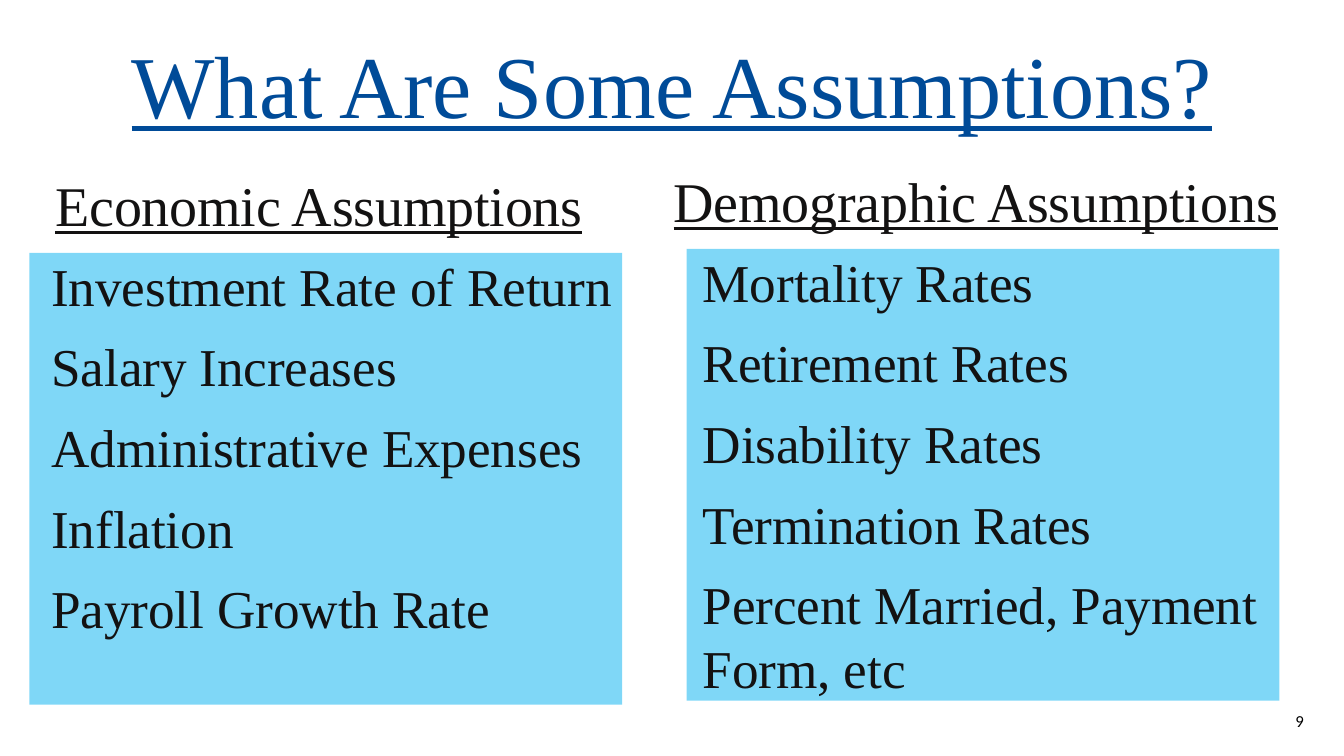
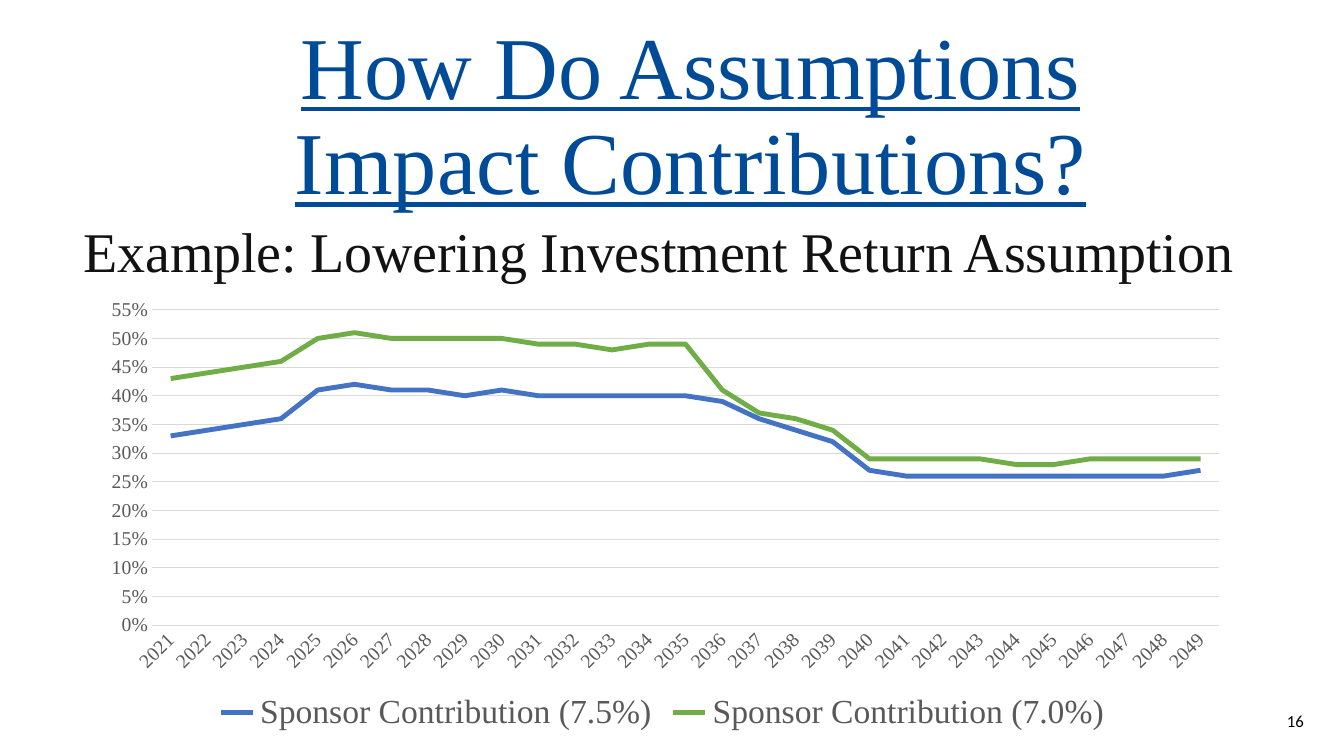
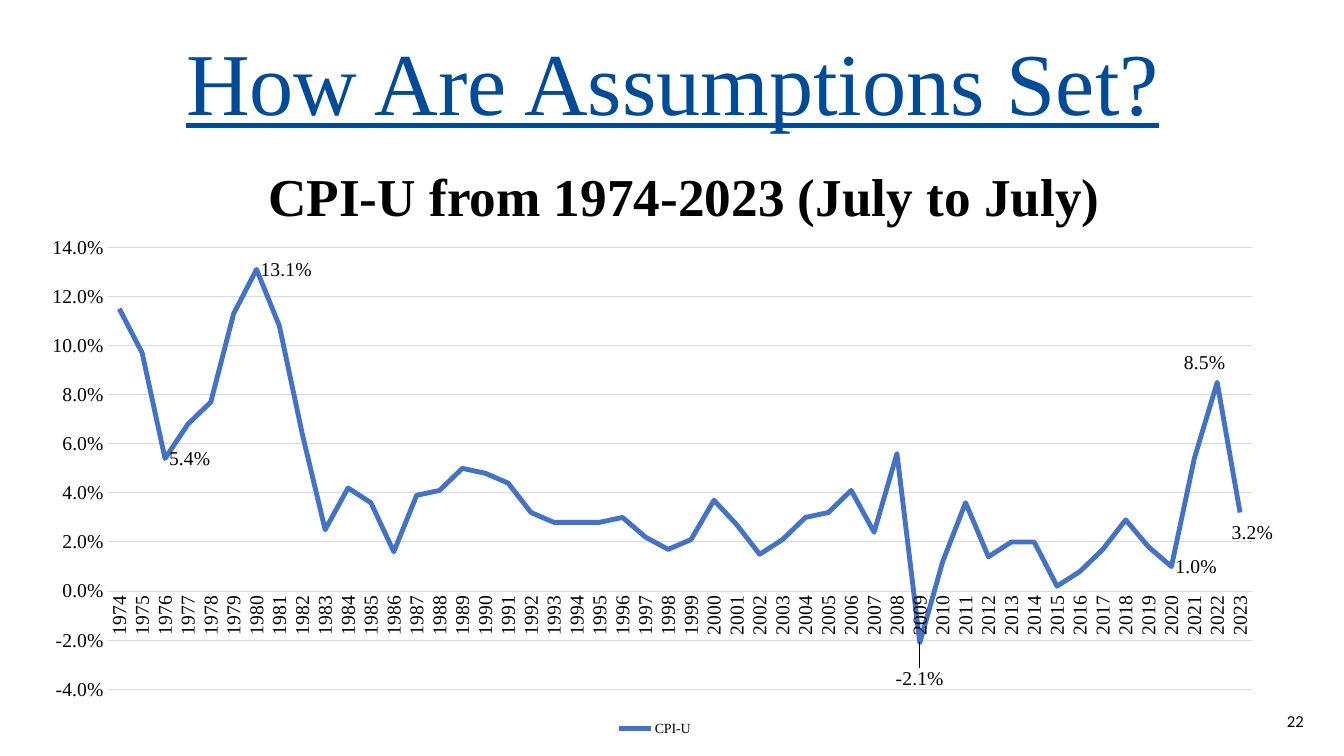
"""Build three slides on actuarial assumptions."""
from dataclasses import dataclass

from lxml.etree import SubElement
from pptx import Presentation
from pptx.chart.data import CategoryChartData as ChartData
from pptx.dml.color import RGBColor as RGB
from pptx.enum.chart import XL_CHART_TYPE as Kind
from pptx.enum.chart import XL_LABEL_POSITION as Pos
from pptx.enum.chart import XL_LEGEND_POSITION as Side
from pptx.enum.chart import XL_TICK_MARK as Tick
from pptx.enum.shapes import MSO_SHAPE as Form
from pptx.enum.text import MSO_ANCHOR as Anchor
from pptx.enum.text import MSO_AUTO_SIZE as Fit
from pptx.enum.text import PP_ALIGN as Align
from pptx.oxml import parse_xml
from pptx.oxml.ns import nsdecls, qn
from pptx.util import Inches, Pt


@dataclass(frozen=True)
class Theme:
    serif: str = "Times New Roman"
    sans: str = "Calibri"
    navy: str = "004B98"
    ink: str = "131212"
    black: str = "000000"
    gray: str = "595959"
    rule: str = "D9D9D9"
    sky: str = "00B0F0"
    blue: str = "4472C4"
    green: str = "70AD47"
    title: int = 63
    head: int = 40
    item: int = 38
    key: int = 24
    tick: int = 14
    page: int = 12
    note: int = 10
    line: float = 3.5
    hair: float = 0.75


T = Theme()
COLS = [
    {"head": "Economic Assumptions", "at": (0.54, 1.48, 5.38, 0.88),
     "panel": (0.29, 2.51, 5.88, 4.48), "body": (0, 2.3, 7.38, 4.08),
     "items": ["Investment Rate of Return", "Salary Increases",
               "Administrative Expenses", "Inflation",
               "Payroll Growth Rate"]},
    {"head": "Demographic Assumptions", "at": (6.67, 1.44, 6.16, 0.88),
     "panel": (6.81, 2.47, 5.88, 4.48), "body": (6.46, 2.26, 6.47, 4.72),
     "items": ["Mortality Rates", "Retirement Rates", "Disability Rates",
               "Termination Rates", "Percent Married, Payment Form, etc"]},
]
SPONSOR = {
    "at": (0.82, 2.85, 11.5, 4.47), "plot": (0.06, 0.05, 0.92, 0.7),
    "start": 2021, "turn": -45, "scale": (0, 0.55, 0.05), "fmt": "0%",
    "color": T.gray, "key": T.key,
    "rows": [
        ("Sponsor Contribution (7.5%)", T.blue,
         [0.33, 0.34, 0.35, 0.36, 0.41, 0.42, 0.41, 0.41, 0.4, 0.41,
          0.4, 0.4, 0.4, 0.4, 0.4, 0.39, 0.36, 0.34, 0.32, 0.27,
          0.26, 0.26, 0.26, 0.26, 0.26, 0.26, 0.26, 0.26, 0.27]),
        ("Sponsor Contribution (7.0%)", T.green,
         [0.43, 0.44, 0.45, 0.46, 0.5, 0.51, 0.5, 0.5, 0.5, 0.5,
          0.49, 0.49, 0.48, 0.49, 0.49, 0.41, 0.37, 0.36, 0.34, 0.29,
          0.29, 0.29, 0.29, 0.28, 0.28, 0.29, 0.29, 0.29, 0.29]),
    ],
}
PRICES = {
    "at": (0.33, 2.25, 12.33, 5.1), "plot": (0.06, 0.04, 0.92, 0.86),
    "start": 1974, "turn": -90, "scale": (-0.04, 0.14, 0.02), "fmt": "0.0%",
    "color": T.black, "key": T.note,
    "rows": [
        ("CPI-U", T.blue,
         [0.115, 0.097, 0.054, 0.068, 0.077, 0.113, 0.131, 0.108, 0.064,
          0.025, 0.042, 0.036, 0.016, 0.039, 0.041, 0.05, 0.048, 0.044,
          0.032, 0.028, 0.028, 0.028, 0.03, 0.022, 0.017, 0.021, 0.037,
          0.027, 0.015, 0.021, 0.03, 0.032, 0.041, 0.024, 0.056, -0.021,
          0.012, 0.036, 0.014, 0.02, 0.02, 0.002, 0.008, 0.017, 0.029,
          0.018, 0.01, 0.054, 0.085, 0.032]),
    ],
}
MARKS = [
    (1976, Pos.RIGHT, None), (1980, Pos.RIGHT, None),
    (2009, Pos.BELOW, (0, 0.04)), (2020, Pos.RIGHT, None),
    (2022, Pos.ABOVE, (-0.01, -0.01)), (2023, Pos.BELOW, (0.01, 0.01)),
]
C15 = "http://schemas.microsoft.com/office/drawing/2012/chart"
LEADERS = (f'<c:extLst {nsdecls("c")}>'
           '<c:ext uri="{CE6537A1-D6FC-4f65-9D91-7224C49458BB}" '
           f'xmlns:c15="{C15}"><c15:showLeaderLines val="1"/>'
           '</c:ext></c:extLst>')


def place(box, at):
    box.left, box.top, box.width, box.height = map(Inches, at)


def style(font, size, color, face=T.serif, bold=False, under=False):
    font.name, font.size, font.bold = face, Pt(size), bold
    font.underline = under
    font.color.rgb = RGB.from_string(color)


def write(box, at, lines, size, color, inset=(0.1, 0.05), left=0, gap=12,
          align=Align.LEFT, anchor=Anchor.TOP, lead=1.0, spc=0, **look):
    place(box, at)
    frame = box.text_frame
    frame.word_wrap, frame.auto_size = True, Fit.NONE
    frame.vertical_anchor = anchor
    side, top = inset
    frame.margin_left = frame.margin_right = Inches(side)
    frame.margin_top = Inches(top)
    frame.margin_bottom = Inches(0.05 if side else 0)
    for i, line in enumerate(lines):
        para = frame.add_paragraph() if i else frame.paragraphs[0]
        props = para._p.get_or_add_pPr()
        props.set("marL", str(Inches(left)))
        props.set("indent", "0")
        SubElement(props, qn("a:buNone"))
        para.alignment, para.line_spacing = align, lead
        para.space_before = Pt(gap if i else 0)
        run = para.add_run()
        run.text = line
        style(run.font, size, color, **look)
        if spc:
            run._r.get_or_add_rPr().set("spc", str(spc))


def start(deck, layout, title, at, page):
    slide = deck.slides.add_slide(deck.slide_layouts[layout])
    write(slide.shapes.title, at, [title], T.title, T.navy,
          align=Align.CENTER, lead=0.9, under=True)
    num = slide.shapes.add_textbox(0, 0, 0, 0)
    write(num, (10.7, 6.95, 2.33, 0.4), [page], T.page, T.black,
          align=Align.RIGHT, anchor=Anchor.MIDDLE, face=T.sans)
    return slide


def layout(x, y, w=None, h=None):
    inner = '<c:layoutTarget val="inner"/>' if w else ""
    modes = '<c:xMode val="edge"/><c:yMode val="edge"/>' if w else ""
    size = f'<c:w val="{w}"/><c:h val="{h}"/>' if w else ""
    return parse_xml(
        f'<c:layout {nsdecls("c")}><c:manualLayout>{inner}{modes}'
        f'<c:x val="{x}"/><c:y val="{y}"/>{size}'
        '</c:manualLayout></c:layout>')


def hairline(line):
    line.color.rgb = RGB.from_string(T.rule)
    line.width = Pt(T.hair)


def draw(slide, info):
    rows = info["rows"]
    data = ChartData(number_format=info["fmt"])
    first = info["start"]
    data.categories = [str(first + i) for i in range(len(rows[0][2]))]
    for name, _, vals in rows:
        data.add_series(name, vals)
    chart = slide.shapes.add_chart(
        Kind.LINE, *map(Inches, info["at"]), data).chart
    style(chart.font, T.note, T.black)
    chart.has_title = False
    chart.has_legend = True
    chart.legend.position = Side.BOTTOM
    chart.legend.include_in_layout = False
    style(chart.legend.font, info["key"], info["color"])
    cat, val = chart.category_axis, chart.value_axis
    for axis in (cat, val):
        axis.major_tick_mark = axis.minor_tick_mark = Tick.NONE
        style(axis.tick_labels.font, T.tick, info["color"])
    hairline(cat.format.line)
    turn = cat._element.find(qn("c:txPr")).find(qn("a:bodyPr"))
    turn.set("rot", str(info["turn"] * 60000))
    turn.set("vert", "horz")
    val.minimum_scale, val.maximum_scale, val.major_unit = info["scale"]
    val.tick_labels.number_format = info["fmt"]
    val.tick_labels.number_format_is_linked = False
    val.format.line.fill.background()
    hairline(val.major_gridlines.format.line)
    plot = chart.plots[0]
    plot.vary_by_categories = False
    for line, (_, color, _) in zip(plot.series, rows):
        line.smooth = False
        line.format.line.color.rgb = RGB.from_string(color)
        line.format.line.width = Pt(T.line)
    area = chart._chartSpace.chart.plotArea
    for old in area.findall(qn("c:layout")):
        area.remove(old)
    area.insert(0, layout(*info["plot"]))
    return plot.series[0]


def label(line, first):
    tags = line.data_labels
    tags.show_value = False
    for year, pos, shift in MARKS:
        i = year - first
        tag = line.points[i].data_label
        style(tag.font, T.tick, T.black)
        tag.position = pos
        if shift:
            spot = line._element.xpath(f'.//c:dLbl/c:idx[@val="{i}"]')[0]
            spot.addnext(layout(*shift))
    tags._element.append(parse_xml(LEADERS))


def panel(slide, at):
    box = slide.shapes.add_shape(Form.RECTANGLE, *map(Inches, at))
    box.shadow.inherit = False
    box.fill.solid()
    box.fill.fore_color.rgb = RGB.from_string(T.sky)
    box.line.fill.background()
    tint = box.element.spPr.find(qn("a:solidFill"))[0]
    SubElement(tint, qn("a:alpha")).set("val", "50000")
    slide.shapes.title.element.addprevious(box.element)


def main():
    deck = Presentation()
    deck.slide_width, deck.slide_height = Inches(13.33), Inches(7.5)
    tight = {"inset": (0, 0.21), "spc": -10}

    slide = start(deck, 4, "What Are Some Assumptions?",
                  (0.4, 0.37, 12.53, 0.87), "9")
    for i, col in enumerate(COLS):
        panel(slide, col["panel"])
        head, body = (slide.placeholders[2 * i + k] for k in (1, 2))
        write(head, col["at"], [col["head"]], T.head, T.ink, left=0.01,
              under=True, **tight)
        write(body, col["body"], col["items"], T.item, T.ink, left=0.51,
              **tight)

    slide = start(deck, 1, "How Do Assumptions Impact Contributions?",
                  (1.71, 0.18, 10.28, 1.95), "16")
    write(slide.placeholders[1], (0.82, 1.94, 11.5, 0.88),
          ["Example: Lowering Investment Return Assumption"],
          T.head, T.ink, left=0.01, **tight)
    draw(slide, SPONSOR)

    slide = start(deck, 1, "How Are Assumptions Set?",
                  (0.67, 0.34, 12, 0.87), "22")
    write(slide.placeholders[1], (2.56, 1.57, 8.55, 1.03),
          ["CPI-U from 1974-2023 (July to July)"],
          T.item, T.black, bold=True)
    label(draw(slide, PRICES), PRICES["start"])

    deck.save("out.pptx")


if __name__ == "__main__":
    main()
